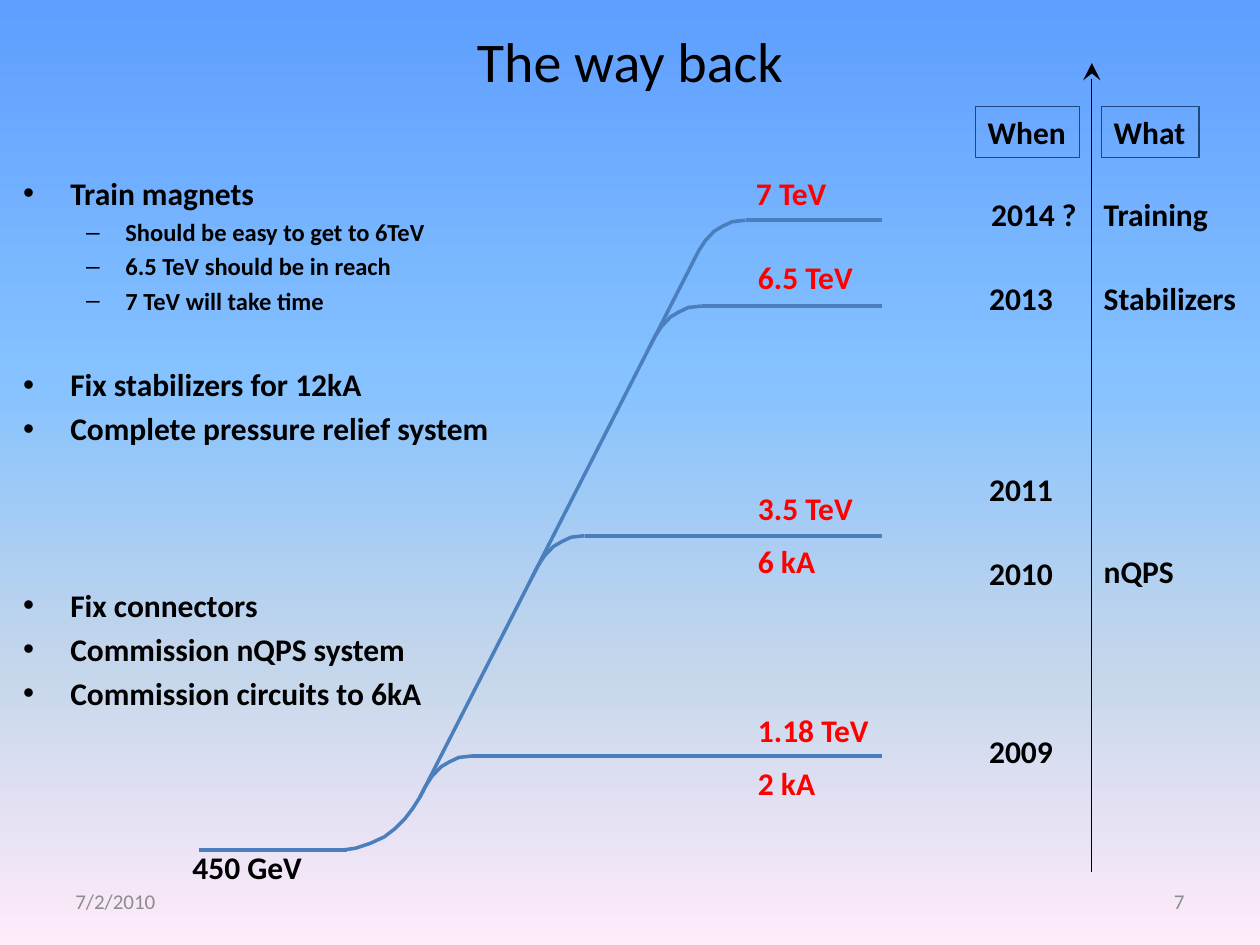
import lxml.etree
import pptx
import pptx.dml.color
import pptx.enum.shapes
import pptx.enum.text
import pptx.oxml.ns
import pptx.util
from dataclasses import dataclass

Cm = pptx.util.Cm
Pt = pptx.util.Pt
qn = pptx.oxml.ns.qn
Align = pptx.enum.text.PP_ALIGN
Anchor = pptx.enum.text.MSO_ANCHOR


@dataclass(frozen=True)
class Theme:
    font: str = "Calibri"
    ink: str = "000000"
    red: str = "FF0000"
    gray: str = "8C8C8C"
    blue: str = "4B7EBC"
    navy: str = "1F497D"
    sky: tuple = ((0, "5E9EFF"), (40, "85C2FF"), (70, "C4D6EB"), (100, "FFEBFA"))
    title: int = 32
    body: int = 18
    sub: int = 14
    foot: int = 12
    thin: float = 0.75
    thick: float = 2


def rgb(code):
    return pptx.dml.color.RGBColor.from_string(code)


def write(par, text, size, color, font, bold=False, align=Align.LEFT, gap=None):
    par.alignment = align
    if gap is not None:
        par.space_before = Pt(gap)
    run = par.add_run()
    run.text = text
    run.font.name = font
    run.font.size = Pt(size)
    run.font.bold = bold
    run.font.color.rgb = rgb(color)


class Page:
    def __init__(self, deck, theme):
        self.theme = theme
        self.slide = deck.slides.add_slide(deck.slide_layouts[1])
        self.shapes = self.slide.shapes

    def back(self):
        fill = self.slide.background.fill
        fill.gradient()
        fill.gradient_angle = 270
        stops = next(self.slide.element.iter(qn("a:gsLst")))
        for stop in list(stops):
            stops.remove(stop)
        for pos, code in self.theme.sky:
            stop = lxml.etree.SubElement(stops, qn("a:gs"), pos=str(pos * 1000))
            lxml.etree.SubElement(stop, qn("a:srgbClr"), val=code)

    def place(self, shape, x, y, w, h):
        shape.left, shape.top, shape.width, shape.height = Cm(x), Cm(y), Cm(w), Cm(h)

    def title(self, text, *area):
        shape = self.shapes.title
        self.place(shape, *area)
        shape.text_frame.vertical_anchor = Anchor.MIDDLE
        write(shape.text_frame.paragraphs[0], text, self.theme.title,
              self.theme.ink, self.theme.font, align=Align.CENTER)

    def items(self, rows, *area):
        shape = self.slide.placeholders[1]
        self.place(shape, *area)
        frame = shape.text_frame
        for i, (level, text, gap) in enumerate(rows):
            par = frame.add_paragraph() if i else frame.paragraphs[0]
            par.level = level
            size = self.theme.sub if level else self.theme.body
            write(par, text, size, self.theme.ink, self.theme.font, bold=True, gap=gap)

    def fit(self, shape, text, color):
        frame = shape.text_frame
        frame.word_wrap = False
        frame.auto_size = pptx.enum.text.MSO_AUTO_SIZE.SHAPE_TO_FIT_TEXT
        frame.vertical_anchor = Anchor.TOP
        write(frame.paragraphs[0], text, self.theme.body, color, self.theme.font, bold=True)

    def label(self, text, x, y, w, color=None):
        box = self.shapes.add_textbox(Cm(x), Cm(y), Cm(w), Cm(1.02))
        self.fit(box, text, color or self.theme.ink)

    def head(self, text, x, y, w):
        box = self.shapes.add_shape(pptx.enum.shapes.MSO_SHAPE.RECTANGLE,
                                    Cm(x), Cm(y), Cm(w), Cm(1.02))
        box.shadow.inherit = False
        box.fill.background()
        box.line.color.rgb = rgb(self.theme.navy)
        box.line.width = Pt(self.theme.thin)
        self.fit(box, text, self.theme.ink)

    def foot(self, text, x, align):
        box = self.shapes.add_textbox(Cm(x), Cm(17.66), Cm(5.93), Cm(1.01))
        box.text_frame.word_wrap = True
        box.text_frame.vertical_anchor = Anchor.MIDDLE
        write(box.text_frame.paragraphs[0], text, self.theme.foot,
              self.theme.gray, self.theme.font, align=align)

    def line(self, x1, y1, x2, y2):
        link = self.shapes.add_connector(pptx.enum.shapes.MSO_CONNECTOR.STRAIGHT,
                                         Cm(x1), Cm(y1), Cm(x2), Cm(y2))
        link.line.color.rgb = rgb(self.theme.blue)
        link.line.width = Pt(self.theme.thick)
        lxml.etree.SubElement(link.element.spPr, qn("a:effectLst"))
        return link

    def arrow(self, *ends):
        link = self.line(*ends)
        link.line.color.rgb = rgb(self.theme.ink)
        link.line.width = Pt(self.theme.thin)
        lxml.etree.SubElement(link.element.spPr.find(qn("a:ln")), qn("a:headEnd"),
                              type="stealth", w="lg", len="lg")

    def curve(self, dots, x, y):
        dots = [(Cm(x + a), Cm(y + b)) for a, b in dots]
        pen = self.shapes.build_freeform(*dots[0])
        pen.add_line_segments(dots[1:], close=False)
        shape = pen.convert_to_shape()
        shape.shadow.inherit = False
        shape.fill.background()
        shape.line.color.rgb = rgb(self.theme.blue)
        shape.line.width = Pt(self.theme.thick)


KNEE = [(1.06, 0), (0.79, 0.03), (0.6, 0.12), (0.43, 0.22), (0.25, 0.41),
        (0.12, 0.61), (0, 0.84)]
FOOT = [(0, 1.06), (0.2, 1.05), (0.41, 1.02), (0.71, 0.92), (0.99, 0.79),
        (1.21, 0.62), (1.4, 0.43), (1.56, 0.22), (1.7, 0)]
ITEMS = [
    (0, "Train magnets", 3.6),
    (1, "Should be easy to get to 6TeV", 2.9),
    (1, "6.5 TeV should be in reach", 2.9),
    (1, "7 TeV will take time", 2.9),
    (0, "Fix stabilizers for 12kA", 28.6),
    (0, "Complete pressure relief system", 3.6),
    (0, "Fix connectors", 79.3),
    (0, "Commission nQPS system", 3.6),
    (0, "Commission circuits to 6kA", 3.6),
]
WHEN = [("2014 ?", 19.73, 3.81, 2.26), ("2013", 19.69, 5.51, 1.8),
        ("2011", 19.69, 9.35, 1.8), ("2010", 19.69, 11.05, 1.8),
        ("2009", 19.69, 14.63, 1.8)]
WHAT = [("Training", 22, 3.81, 2.62), ("Stabilizers", 22, 5.51, 3.2),
        ("nQPS", 22, 11, 1.93)]
POWER = [("7 TeV", 14.99, 3.38, 1.96), ("6.5 TeV", 15.03, 5.08, 2.44),
         ("3.5 TeV", 15.03, 9.73, 2.44), ("6 kA", 15.03, 10.8, 1.68),
         ("1.18 TeV", 15.03, 14.21, 2.77), ("2 kA", 15.03, 15.27, 1.68)]


def main():
    deck = pptx.Presentation()
    deck.slide_width, deck.slide_height = Cm(25.4), Cm(19.05)
    theme = Theme()
    page = Page(deck, theme)
    page.back()
    page.title("The way back", 1.27, 0.43, 22.86, 1.57)
    page.items(ITEMS, 0.21, 3.38, 11.43, 15.24)
    page.foot("7/2/2010", 1.27, Align.LEFT)
    page.foot("7", 18.2, Align.RIGHT)

    page.arrow(22.01, 1.27, 22.01, 17.57)
    page.head("When", 19.66, 2.15, 2.11)
    page.head("What", 22.2, 2.15, 1.97)

    low, high = (8.46, 16.08), (13.97, 5.28)
    slope = (high[0] - low[0]) / (low[1] - high[1])
    page.line(4.01, 17.14, 6.99, 17.14)
    page.curve(FOOT, 6.76, low[1])
    page.line(*low, *high)
    for y in (4.44, 6.17, 10.8, 15.24):
        x = low[0] + (low[1] - y - KNEE[-1][1]) * slope
        page.curve(KNEE, x, y)
        page.line(x + KNEE[0][0], y, 17.78, y)

    for row in WHEN + WHAT:
        page.label(*row)
    for row in POWER:
        page.label(*row, color=theme.red)
    page.label("450 GeV", 3.63, 16.97, 2.72)
    deck.save("out.pptx")


if __name__ == "__main__":
    main()
